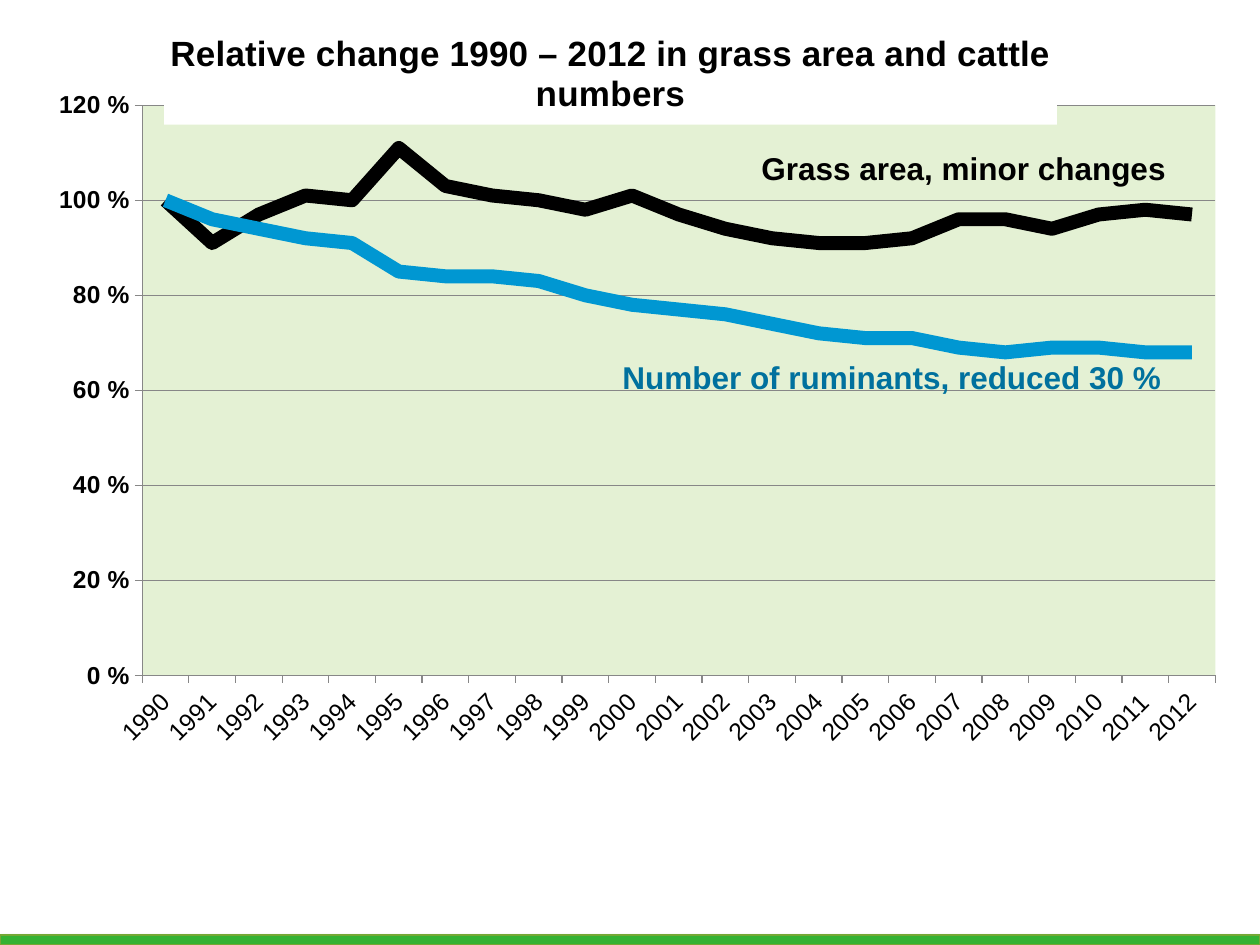
import pptx
import pptx.chart.data
import pptx.dml.color
import pptx.enum.chart
import pptx.enum.shapes
import pptx.oxml
import pptx.oxml.ns
import pptx.util

EMU_PER_PX = 914400 / 126
FONT = "Arial"
COLORS = {
    "black": "000000", "white": "FFFFFF", "plot": "E4F1D4", "grid": "878787",
    "ruminants": "0097D2", "ruminants_label": "00719E",
    "footer": "34B233", "footer_line": "74A834",
}
TITLE = "Relative change 1990 – 2012 in grass area and cattle numbers"
YEARS = [str(year) for year in range(1990, 2013)]
GRASS = [1, 0.91, 0.97, 1.01, 1, 1.11, 1.03, 1.01, 1, 0.98, 1.01, 0.97,
         0.94, 0.92, 0.91, 0.91, 0.92, 0.96, 0.96, 0.94, 0.97, 0.98, 0.97]
RUMINANTS = [1, 0.96, 0.94, 0.92, 0.91, 0.85, 0.84, 0.84, 0.83, 0.8, 0.78, 0.77,
             0.76, 0.74, 0.72, 0.71, 0.71, 0.69, 0.68, 0.69, 0.69, 0.68, 0.68]


def px(length):
    """Turn pixels into EMU."""
    return pptx.util.Emu(round(length * EMU_PER_PX))


def rgb(name):
    """Look up a named colour."""
    return pptx.dml.color.RGBColor.from_string(COLORS[name])


def style_font(font, size, color="black", bold=False):
    """Set the face, size, colour and weight of a font."""
    font.name = FONT
    font.size = pptx.util.Pt(size)
    font.bold = bold
    font.color.rgb = rgb(color)


def style_line(line, color, width):
    """Set the colour and width in points of a line."""
    line.color.rgb = rgb(color)
    line.width = pptx.util.Pt(width)


def xml(tag, body):
    """Build an element from its prefixed tag and its inner XML."""
    namespaces = pptx.oxml.ns.nsdecls("a", "c")
    return pptx.oxml.parse_xml(f"<{tag} {namespaces}>{body}</{tag}>")


def manual_layout(target="", **fractions):
    """Build a chart layout from fractions of the chart size."""
    modes = '<c:xMode val="edge"/><c:yMode val="edge"/>'
    places = "".join(f'<c:{key} val="{value}"/>' for key, value in fractions.items())
    return xml("c:layout", f"<c:manualLayout>{target}{modes}{places}</c:manualLayout>")


def add_footer(slide):
    """Add the green bar along the bottom edge."""
    bar = slide.shapes.add_shape(
        pptx.enum.shapes.MSO_SHAPE.RECTANGLE, px(0), px(935), px(1260), px(10))
    bar.fill.solid()
    bar.fill.fore_color.rgb = rgb("footer")
    style_line(bar.line, "footer_line", 0.75)
    bar.shadow.inherit = False
    effects = bar._element.spPr.find(pptx.oxml.ns.qn("a:effectLst"))
    effects.append(pptx.oxml.parse_xml(
        f'<a:outerShdw {pptx.oxml.ns.nsdecls("a")} blurRad="39370" dist="22860" '
        'dir="5400000" rotWithShape="0"><a:srgbClr val="000000">'
        '<a:alpha val="35000"/></a:srgbClr></a:outerShdw>'))


def add_title(chart):
    """Put the white title box over the top of the plot."""
    title = chart.chart_title
    title.text_frame.text = TITLE
    style_font(title.text_frame.paragraphs[0].runs[0].font, 20, bold=True)
    title.format.fill.solid()
    title.format.fill.fore_color.rgb = rgb("white")
    element = title._element
    for tag in ("c:layout", "c:overlay"):
        for old in element.findall(pptx.oxml.ns.qn(tag)):
            element.remove(old)
    overlay = xml("c:overlay", "")
    overlay.set("val", "1")
    text = element.find(pptx.oxml.ns.qn("c:tx"))
    text.addnext(overlay)
    text.addnext(manual_layout(x=0.135, y=0.03))


def style_axis(axis, bold):
    """Format the labels, ticks and line of an axis."""
    axis.major_tick_mark = pptx.enum.chart.XL_TICK_MARK.OUTSIDE
    axis.minor_tick_mark = pptx.enum.chart.XL_TICK_MARK.NONE
    style_font(axis.tick_labels.font, 14, bold=bold)
    style_line(axis.format.line, "grid", 0.75)


def style_plot_area(chart):
    """Place and fill the plot area."""
    area = chart._chartSpace.chart.plotArea
    for old in area.findall(pptx.oxml.ns.qn("c:layout")):
        area.remove(old)
    area.insert(0, manual_layout(
        '<c:layoutTarget val="inner"/>', x=0.117, y=0.127, w=0.883, h=0.688))
    area.append(xml("c:spPr", f'<a:solidFill><a:srgbClr val="{COLORS["plot"]}"/></a:solidFill>'))


def add_trend_chart(slide):
    """Add the line chart of grass area and ruminants."""
    data = pptx.chart.data.CategoryChartData(number_format="0\\ %")
    data.categories = YEARS
    data.add_series("Grass area", GRASS)
    data.add_series("Number of ruminants", RUMINANTS)
    chart = slide.shapes.add_chart(
        pptx.enum.chart.XL_CHART_TYPE.LINE, px(0), px(0), px(1216), px(829), data).chart
    style_font(chart.font, 10)
    chart.has_legend = False
    add_title(chart)
    style_plot_area(chart)

    chart.plots[0].vary_by_categories = False
    for series, color in zip(chart.plots[0].series, ("black", "ruminants")):
        series.smooth = False
        series.marker.style = pptx.enum.chart.XL_MARKER_STYLE.NONE
        style_line(series.format.line, color, 8)

    style_axis(chart.category_axis, bold=False)
    style_axis(chart.value_axis, bold=True)
    label_body = chart.category_axis._element.txPr.find(pptx.oxml.ns.qn("a:bodyPr"))
    label_body.set("rot", "-2700000")
    share = chart.value_axis
    share.minimum_scale, share.maximum_scale, share.major_unit = 0, 1.2, 0.2
    share.tick_labels.number_format = "0\\ %"
    share.tick_labels.number_format_is_linked = False
    share.has_major_gridlines = True
    style_line(share.major_gridlines.format.line, "grid", 0.75)


def add_label(slide, text, left, top, width, color):
    """Add a bold label beside a line of the chart."""
    frame = slide.shapes.add_textbox(px(left), px(top), px(width), px(50)).text_frame
    frame.word_wrap = True
    frame.text = text
    style_font(frame.paragraphs[0].runs[0].font, 18, color, bold=True)


def main():
    """Build the slide and save it."""
    deck = pptx.Presentation()
    deck.slide_width, deck.slide_height = px(1260), px(945)
    slide = deck.slides.add_slide(deck.slide_layouts[6])
    add_footer(slide)
    add_trend_chart(slide)
    add_label(slide, "Grass area, minor changes", 749, 143, 496, "black")
    add_label(slide, "Number of ruminants, reduced 30 %", 610, 352, 600, "ruminants_label")
    deck.save("out.pptx")


if __name__ == "__main__":
    main()
